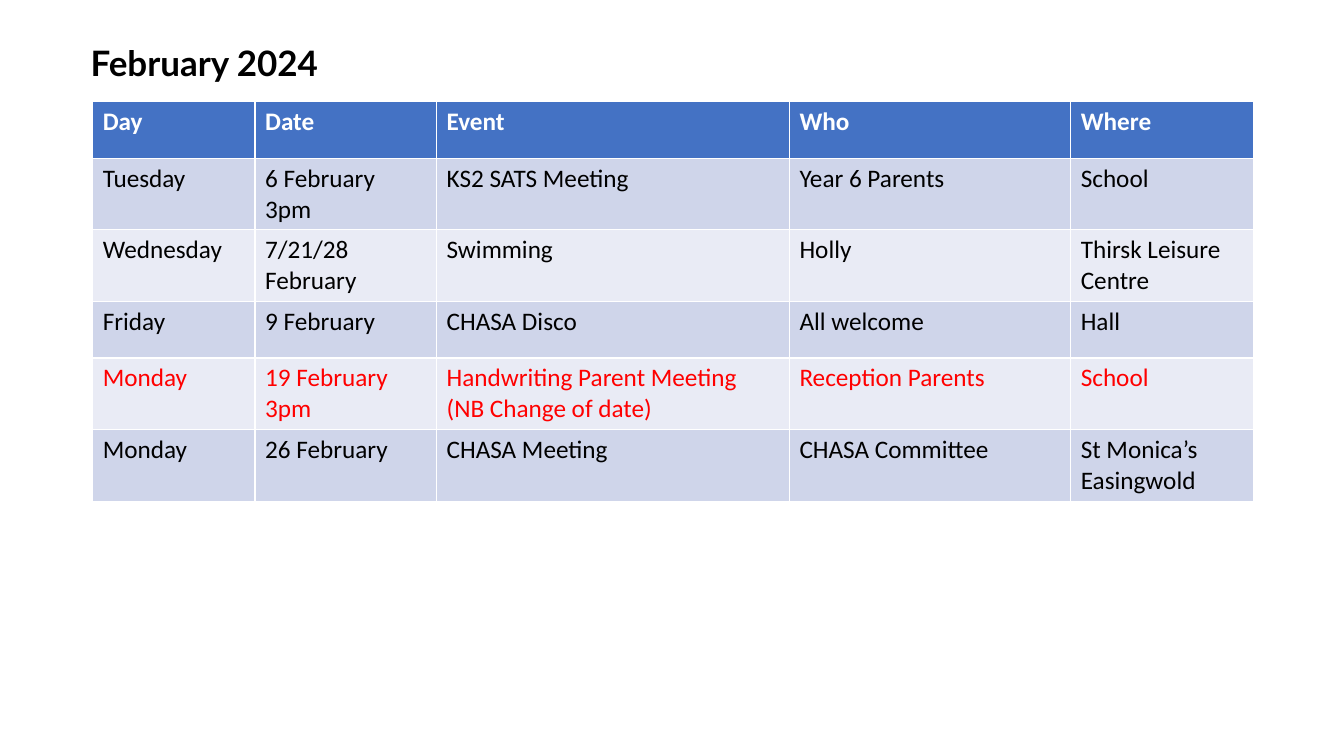
from pptx import Presentation
from pptx.dml.color import RGBColor
from pptx.util import Inches, Pt

WHITE = RGBColor(0xFF, 0xFF, 0xFF)
BLACK = RGBColor(0x00, 0x00, 0x00)
RED = RGBColor(0xFF, 0x00, 0x00)
HEADER_BLUE = RGBColor(0x44, 0x72, 0xC4)
BAND_DARK = RGBColor(0xCF, 0xD5, 0xEA)
BAND_LIGHT = RGBColor(0xE9, 0xEB, 0xF5)

COLUMN_WIDTHS = [1.61, 1.8, 3.5, 2.79, 1.81]
ROW_HEIGHT = 0.56
CHANGED_ROW = 4
EVENTS = [
    ["Day", "Date", "Event", "Who", "Where"],
    ["Tuesday", "6 February\n3pm", "KS2 SATS Meeting", "Year 6 Parents", "School"],
    ["Wednesday", "7/21/28 February", "Swimming", "Holly", "Thirsk Leisure Centre"],
    ["Friday", "9 February", "CHASA Disco", "All welcome", "Hall"],
    ["Monday", "19 February\n3pm", "Handwriting Parent Meeting\n(NB Change of date)",
     "Reception Parents", "School"],
    ["Monday", "26 February", "CHASA Meeting", "CHASA Committee", "St Monica’s Easingwold"],
]


def format_text(text_frame, font_name, size, color, bold):
    """Apply one font style to every run of a text frame."""
    for paragraph in text_frame.paragraphs:
        for run in paragraph.runs:
            run.font.name = font_name
            run.font.size = Pt(size)
            run.font.color.rgb = color
            run.font.bold = bold


def add_title(slide, left, top, width, height):
    """Write the month heading in the given box."""
    title = slide.shapes.add_textbox(Inches(left), Inches(top), Inches(width), Inches(height))
    title.text_frame.word_wrap = True
    title.text_frame.text = "February 2024"
    format_text(title.text_frame, "Lato", 25, BLACK, True)


def row_colors(row_index):
    """Return the fill and text colours of a table row."""
    if row_index == 0:
        return HEADER_BLUE, WHITE
    fill = BAND_DARK if row_index % 2 else BAND_LIGHT
    return fill, RED if row_index == CHANGED_ROW else BLACK


def add_event_table(slide, left, top):
    """Build the table of events from its top left corner."""
    frame = slide.shapes.add_table(
        len(EVENTS), len(COLUMN_WIDTHS), Inches(left), Inches(top),
        Inches(sum(COLUMN_WIDTHS)), Inches(ROW_HEIGHT * len(EVENTS)))
    table = frame.table
    for column, width in zip(table.columns, COLUMN_WIDTHS):
        column.width = Inches(width)
    for row_index, event in enumerate(EVENTS):
        table.rows[row_index].height = Inches(ROW_HEIGHT)
        fill_color, text_color = row_colors(row_index)
        for column_index, text in enumerate(event):
            cell = table.cell(row_index, column_index)
            cell.fill.solid()
            cell.fill.fore_color.rgb = fill_color
            cell.text_frame.text = text
            format_text(cell.text_frame, "Calibri", 18, text_color, row_index == 0)


def main():
    """Create the presentation with the calendar slide."""
    presentation = Presentation()
    presentation.slide_width = Inches(13.33)
    presentation.slide_height = Inches(7.5)
    slide = presentation.slides.add_slide(presentation.slide_layouts[6])
    add_event_table(slide, 0.92, 1.01)
    add_title(slide, 0.8, 0.36, 4.45, 0.52)
    presentation.save("out.pptx")


if __name__ == "__main__":
    main()
